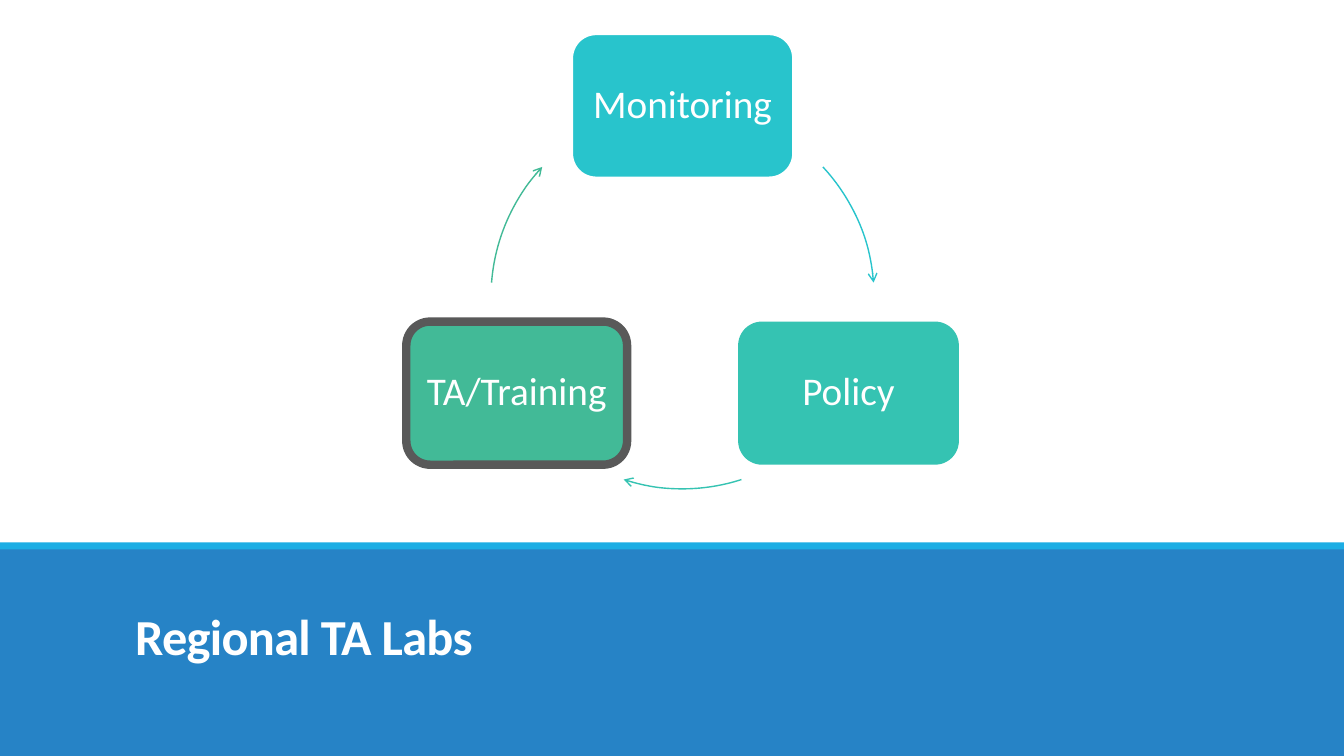
from math import cos, radians, sin

from pptx import Presentation
from pptx.dml.color import RGBColor
from pptx.enum.shapes import MSO_SHAPE as Shape
from pptx.enum.text import MSO_ANCHOR as Anchor, MSO_AUTO_SIZE as AutoSize, PP_ALIGN as Align
from pptx.oxml.ns import qn
from pptx.util import Inches, Pt

WHITE = RGBColor(0xFF, 0xFF, 0xFF)
BLUE = RGBColor(0x26, 0x83, 0xC6)
SKY = RGBColor(0x1C, 0xAD, 0xE4)
CYAN = RGBColor(0x28, 0xC4, 0xCC)
TEAL = RGBColor(0x35, 0xC3, 0xB2)
GREEN = RGBColor(0x42, 0xBA, 0x97)
GRAY = RGBColor(0x59, 0x59, 0x59)

WIDTH, HEIGHT = 13.33, 7.5
CENTER_X, CENTER_Y, RADIUS = 6.77, 2.95, 1.9
NODE_WIDTH, NODE_HEIGHT = 2.19, 1.42


def add_plain_shape(kind, left, top, width, height, fill=None):
    shape = page.shapes.add_shape(kind, *map(Inches, (left, top, width, height)))
    shape.shadow.inherit = False
    shape.line.fill.background()
    if fill is None:
        shape.fill.background()
    else:
        shape.fill.solid()
        shape.fill.fore_color.rgb = fill
    return shape


def write_text(shape, text, frame_format, para_format, font_format):
    frame = shape.text_frame
    para = frame.paragraphs[0]
    span = para.add_run()
    span.text = text
    span.font.color.rgb = WHITE
    for target, values in ((frame, frame_format), (para, para_format), (span.font, font_format)):
        for name, value in values.items():
            setattr(target, name, value)
    return span


deck = Presentation()
deck.slide_width, deck.slide_height = Inches(WIDTH), Inches(HEIGHT)
page = deck.slides.add_slide(deck.slide_layouts[5])

add_plain_shape(Shape.RECTANGLE, 0, 5.42, WIDTH, 2.08, BLUE)
add_plain_shape(Shape.RECTANGLE, 0, 5.38, WIDTH, 0.07, SKY)

title = page.shapes.title
title.left, title.top, title.width, title.height = map(Inches, (1.24, 5.71, 11.06, 0.9))
title_span = write_text(
    title, "Regional TA Labs",
    dict(vertical_anchor=Anchor.BOTTOM, word_wrap=True, auto_size=AutoSize.NONE,
         margin_left=Inches(0.1), margin_right=Inches(0.1), margin_top=0, margin_bottom=0),
    dict(alignment=Align.LEFT, line_spacing=0.85),
    dict(name="Calibri", size=Pt(36), bold=True))
title_span.font._element.set("spc", "-50")
page.shapes._spTree.append(title._element)

node_frame = dict(vertical_anchor=Anchor.MIDDLE, word_wrap=True)
node_frame.update({f"margin_{side}": Inches(0.12) for side in ("left", "right", "top", "bottom")})

cycle = [
    ("Monitoring", CYAN, WHITE, 1.25, 317.1, 355.6),
    ("Policy", TEAL, None, 0, 72.1, 107.9),
    ("TA/Training", GREEN, GRAY, 6, 184.4, 222.9),
]
for index, (label, color, outline, outline_width, start, end) in enumerate(cycle):
    angle = radians(120 * index - 90)
    node = add_plain_shape(
        Shape.ROUNDED_RECTANGLE,
        CENTER_X + RADIUS * cos(angle) - NODE_WIDTH / 2,
        CENTER_Y + RADIUS * sin(angle) - NODE_HEIGHT / 2,
        NODE_WIDTH, NODE_HEIGHT, color)
    if outline is not None:
        node.line.color.rgb = outline
        node.line.width = Pt(outline_width)
    write_text(node, label, node_frame,
               dict(alignment=Align.CENTER, line_spacing=0.9),
               dict(name="Calibri", size=Pt(28)))

    arrow = add_plain_shape(Shape.ARC, CENTER_X - RADIUS, CENTER_Y - RADIUS, 2 * RADIUS, 2 * RADIUS)
    arrow.adjustments[0], arrow.adjustments[1] = start * 0.6, end * 0.6
    arrow.line.color.rgb = color
    arrow.line.width = Pt(1)
    line = arrow.line._get_or_add_ln()
    line.append(line.makeelement(qn("a:tailEnd"), {"type": "arrow"}))

deck.save("out.pptx")
